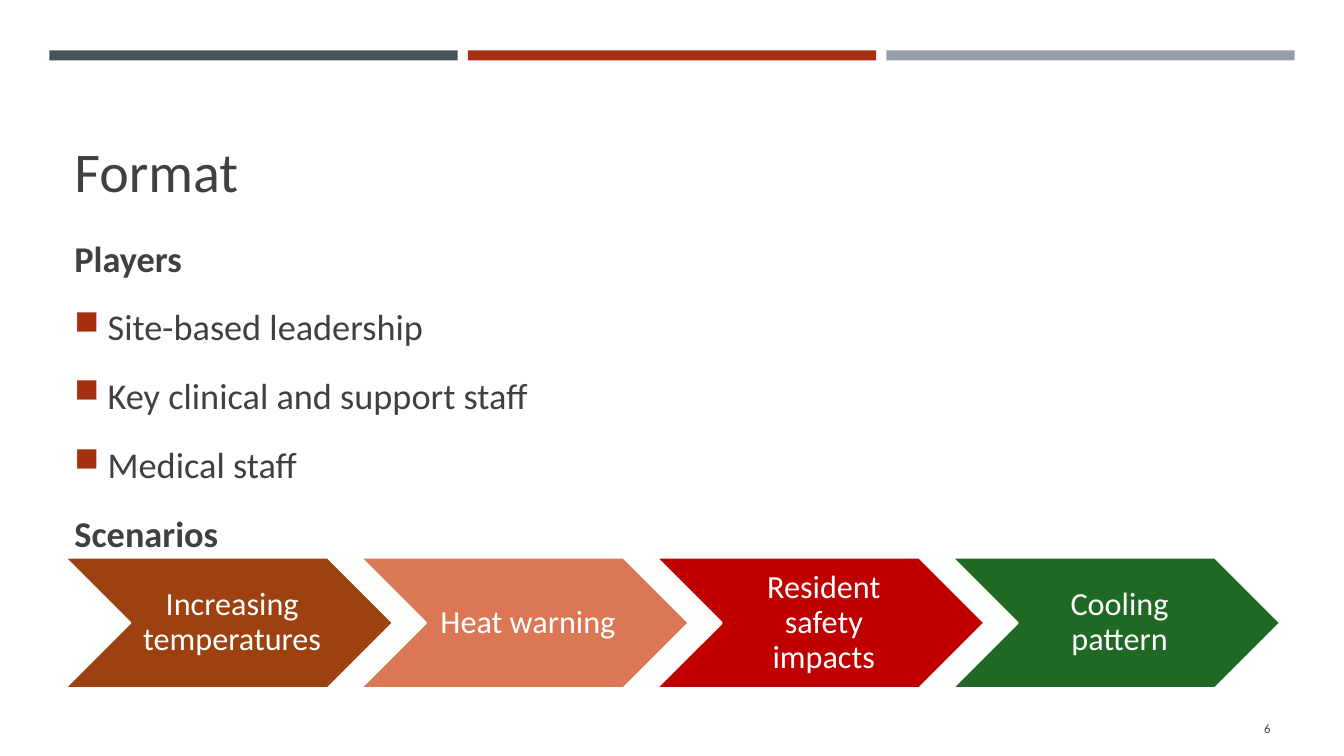
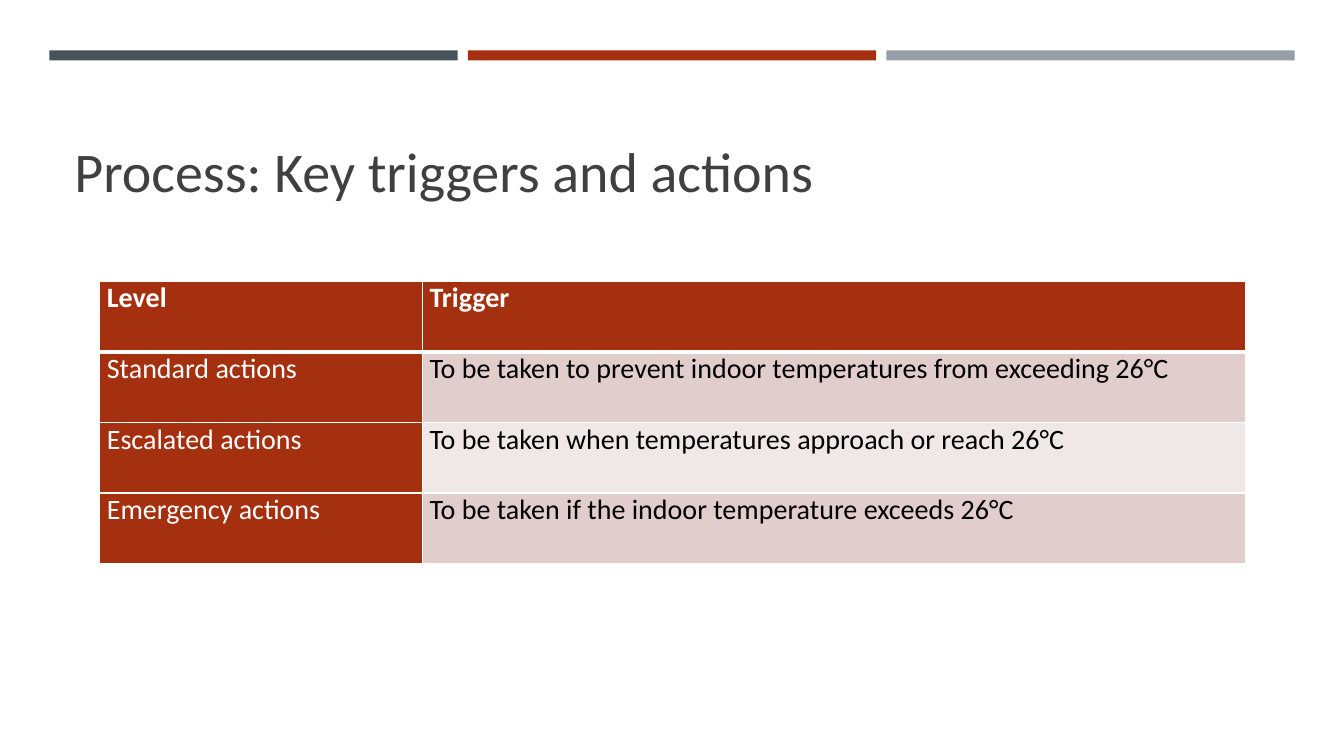
from dataclasses import dataclass

from lxml import etree
from pptx import Presentation
from pptx import util as u
from pptx.dml.color import RGBColor
from pptx.enum import shapes, text
from pptx.oxml import ns


@dataclass(frozen=True)
class Theme:
    font: str = "Calibri"
    ink: str = "404040"
    black: str = "000000"
    white: str = "FFFFFF"
    accent: str = "A5300F"
    bands: tuple = ("465359", "A5300F", "969FA7")
    steps: tuple = ("9E4110", "DC7756", "C00000", "055709")
    rows: tuple = ("F0E8E7", "E1CDCC")
    title: float = 40
    body: float = 25.9
    step: float = 23
    table: float = 20
    number: float = 9


T = Theme()
MARGIN, CONTENT = 0.64, 12.06
BAND_LEFT, BAND_W, BAND_GAP = 0.49, 4.05, 0.1


def format_text(p, size, color, bold=False):
    for r in p.runs:
        r.font.name = T.font
        r.font.size = u.Pt(size)
        r.font.bold = bold
        r.font.color.rgb = RGBColor.from_string(color)


def add_titled_slide(title):
    s = prs.slides.add_slide(prs.slide_layouts[6])
    for i, color in enumerate(T.bands):
        left = BAND_LEFT + i * (BAND_W + BAND_GAP)
        sp = s.shapes.add_shape(shapes.MSO_SHAPE.RECTANGLE, u.Inches(left), u.Inches(0.5),
                                u.Inches(BAND_W), u.Inches(0.1))
        sp.shadow.inherit = False
        sp.fill.solid()
        sp.fill.fore_color.rgb = RGBColor.from_string(color)
        sp.line.fill.background()
    sp = s.shapes.add_textbox(u.Inches(MARGIN), u.Inches(0.77), u.Inches(CONTENT), u.Inches(1.3))
    tf = sp.text_frame
    tf.word_wrap = True
    tf.vertical_anchor = text.MSO_ANCHOR.BOTTOM
    tf.text = title
    format_text(tf.paragraphs[0], T.title, T.ink)
    return s


prs = Presentation()
prs.slide_width, prs.slide_height = u.Inches(13.33), u.Inches(7.5)

s = add_titled_slide("Format")
sp = s.shapes.add_textbox(u.Inches(MARGIN), u.Inches(2.29), u.Inches(CONTENT), u.Inches(3.01))
tf = sp.text_frame
tf.word_wrap = True
headings = ("Players", "Scenarios")
tf.text = "Players\nSite-based leadership\nKey clinical and support staff\nMedical staff\nScenarios"
for p in tf.paragraphs:
    p.space_before, p.space_after = u.Pt(12), u.Pt(6)
    heading = p.text in headings
    format_text(p, T.body, T.ink, heading)
    if not heading:
        pPr = p._p.get_or_add_pPr()
        pPr.set("marL", str(u.Inches(0.33)))
        pPr.set("indent", str(-u.Inches(0.33)))
        clr = etree.SubElement(pPr, ns.qn("a:buClr"))
        etree.SubElement(clr, ns.qn("a:srgbClr"), val=T.accent)
        etree.SubElement(pPr, ns.qn("a:buSzPct"), val="92000")
        etree.SubElement(pPr, ns.qn("a:buChar"), char="■")

steps = ("Increasing temperatures", "Heat warning", "Resident safety impacts", "Cooling pattern")
overlap = 0.1
step_w = CONTENT / (1 + (len(steps) - 1) * (1 - overlap))
for i, (label, color) in enumerate(zip(steps, T.steps)):
    left = MARGIN + i * step_w * (1 - overlap)
    sp = s.shapes.add_shape(shapes.MSO_SHAPE.CHEVRON, u.Inches(left), u.Inches(5.53),
                            u.Inches(step_w), u.Inches(1.3))
    sp.shadow.inherit = False
    sp.fill.solid()
    sp.fill.fore_color.rgb = RGBColor.from_string(color)
    sp.line.color.rgb = RGBColor.from_string(T.white)
    sp.line.width = u.Pt(1.75)
    tf = sp.text_frame
    tf.word_wrap = True
    tf.vertical_anchor = text.MSO_ANCHOR.MIDDLE
    tf.margin_left = u.Inches(0.1)
    tf.margin_right = tf.margin_top = tf.margin_bottom = u.Inches(0.03)
    tf.text = label
    p = tf.paragraphs[0]
    p.alignment = text.PP_ALIGN.CENTER
    p.line_spacing = 0.9
    format_text(p, T.step, T.white)
green = sp._element.spPr.find(ns.qn("a:solidFill")).find(ns.qn("a:srgbClr"))
etree.SubElement(green, ns.qn("a:alpha"), val="89000")

number_w = 1.15
sp = s.shapes.add_textbox(u.Inches(MARGIN + CONTENT - number_w), u.Inches(7.03),
                          u.Inches(number_w), u.Inches(0.4))
tf = sp.text_frame
tf.word_wrap = True
tf.vertical_anchor = text.MSO_ANCHOR.MIDDLE
tf.text = "6"
tf.paragraphs[0].alignment = text.PP_ALIGN.RIGHT
format_text(tf.paragraphs[0], T.number, T.ink)

s = add_titled_slide("Process: Key triggers and actions")
rows = (
    ("Level", "Trigger"),
    ("Standard actions", "To be taken to prevent indoor temperatures from exceeding 26°C"),
    ("Escalated actions", "To be taken when temperatures approach or reach 26°C"),
    ("Emergency actions", "To be taken if the indoor temperature exceeds 26°C"),
)
col_widths = (3.2, 8.16)
table = s.shapes.add_table(len(rows), len(col_widths), u.Inches(0.99), u.Inches(2.79),
                           u.Inches(sum(col_widths)), u.Inches(0.7 * len(rows))).table
for col, width in zip(table.columns, col_widths):
    col.width = u.Inches(width)
for i, row in enumerate(rows):
    for j, value in enumerate(row):
        cell = table.cell(i, j)
        colored = i == 0 or j == 0
        cell.fill.solid()
        cell.fill.fore_color.rgb = RGBColor.from_string(T.accent if colored else T.rows[i % 2])
        cell.margin_left = cell.margin_right = u.Inches(0.07)
        cell.margin_top = cell.margin_bottom = 0
        cell.text = value
        p = cell.text_frame.paragraphs[0]
        p.space_before, p.space_after = u.Pt(6 if j == 0 else 0), u.Pt(6)
        format_text(p, T.table, T.white if colored else T.black, i == 0)
        tcPr = cell._tc.get_or_add_tcPr()
        for k, side in enumerate("LRTB"):
            thick = (i, side) in ((0, "B"), (1, "T"))
            ln = etree.Element(ns.qn("a:ln" + side), w=str(u.Pt(3 if thick else 1)))
            fill = etree.SubElement(ln, ns.qn("a:solidFill"))
            etree.SubElement(fill, ns.qn("a:srgbClr"), val=T.white)
            tcPr.insert(k, ln)

prs.save("out.pptx")
